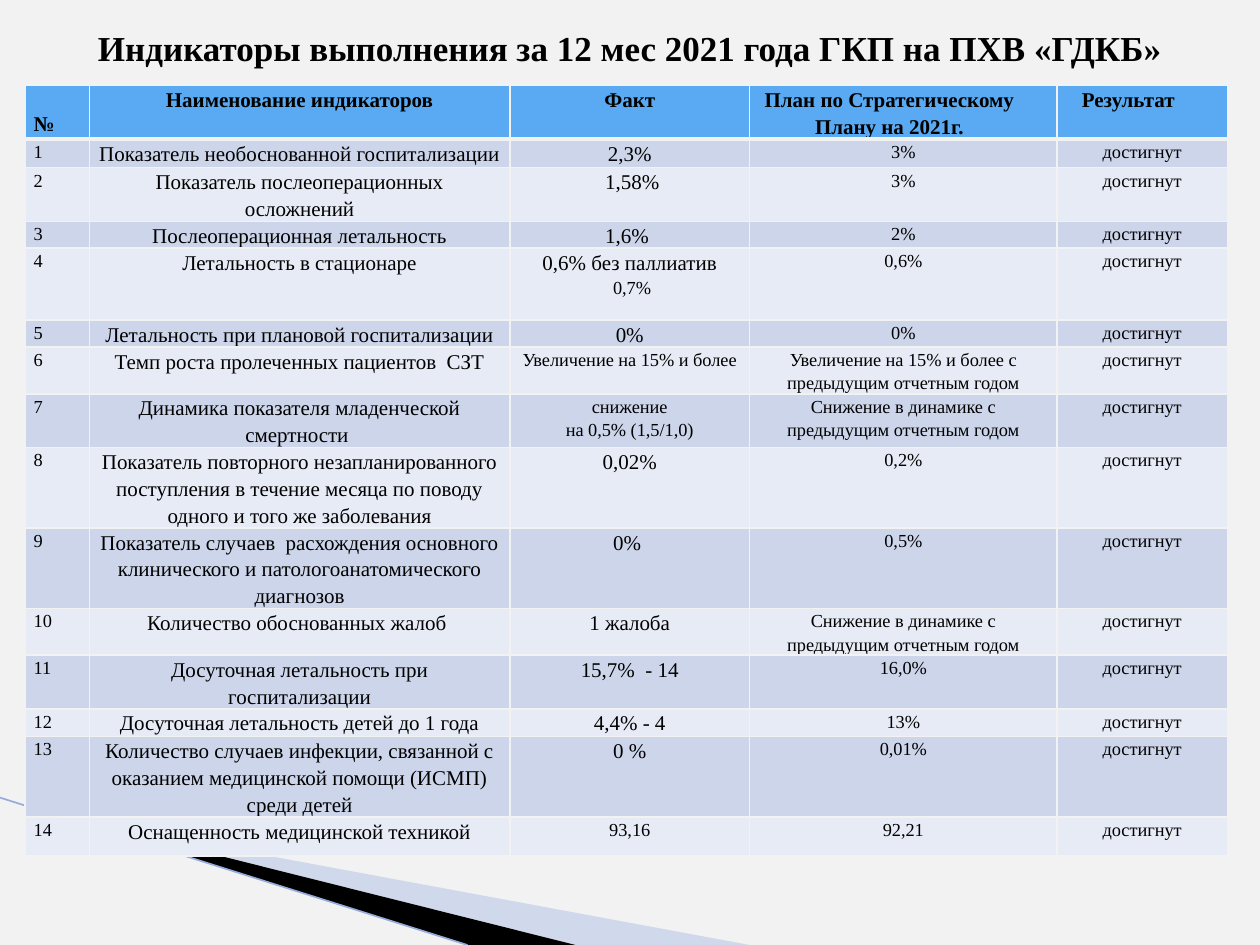
from pptx import Presentation
from pptx.dml.color import RGBColor
from pptx.enum.shapes import MSO_CONNECTOR as CONN
from pptx.enum.text import MSO_ANCHOR as ANCHOR, PP_ALIGN as ALIGN
from pptx.oxml.ns import qn
from pptx.util import Cm, Pt
from lxml.etree import SubElement

COLORS = {"back": "F2F2F2", "head": "59AAF2", "odd": "CCD5EA", "even": "E7EBF5",
          "text": "000000", "wedge": "000000", "glow": "9DB2E1", "edge": "94ABDC"}
COL_WIDTHS = [1.3, 8.48, 4.83, 6.2, 3.43]
ROW_HEIGHTS = [1.04, 0.58, 1.04, 0.51, 1.45, 0.51, 0.91, 1.04,
               1.57, 1.57, 0.91, 1.04, 0.56, 1.57, 0.79]
COL_SIZES = [10.5, 12, 12, 10.5, 10.5]
SMALL_FACTS = {" 0,7%", "Увеличение на 15% и более", " снижение ",
               "на 0,5% (1,5/1,0)", "93,16"}
HEADER = ["№", "Наименование индикаторов", "Факт",
          "План по Стратегическому Плану на 2021г.", "Результат"]
RESULT = "достигнут"
INDICATORS = [
    ("Показатель необоснованной госпитализации", "2,3%", "3%"),
    ("Показатель послеоперационных осложнений", " 1,58%", "3%"),
    ("Послеоперационная летальность", "1,6% ", "2%"),
    ("Летальность в стационаре", "0,6% без паллиатив\n 0,7%", "0,6%"),
    ("Летальность при плановой госпитализации", "0%", "0%"),
    ("Темп роста пролеченных пациентов  СЗТ", "Увеличение на 15% и более",
     "Увеличение на 15% и более с предыдущим отчетным годом"),
    ("Динамика показателя младенческой смертности ", " снижение \nна 0,5% (1,5/1,0)",
     "Снижение в динамике с предыдущим отчетным годом"),
    ("Показатель повторного незапланированного поступления в течение месяца "
     "по поводу одного и того же заболевания", "0,02%", "0,2%"),
    ("Показатель случаев  расхождения основного клинического "
     "и патологоанатомического диагнозов", "0% ", "0,5%"),
    ("Количество обоснованных жалоб ", "1 жалоба",
     "Снижение в динамике с предыдущим отчетным годом"),
    ("Досуточная летальность при госпитализации", "15,7%  - 14", "16,0%"),
    ("Досуточная летальность детей до 1 года", "4,4% - 4", "13%"),
    ("Количество случаев инфекции, связанной с оказанием медицинской помощи "
     "(ИСМП) среди детей", "0 %", "0,01%"),
    ("Оснащенность медицинской техникой", "93,16", "92,21"),
]


def rgb(name):
    """Return the named colour."""
    return RGBColor.from_string(COLORS[name])


def set_attrs(obj, values):
    """Set each attribute of the object from a dict."""
    for name, value in values.items():
        setattr(obj, name, value)


def write(tf, text, size, bold=False, align=ALIGN.CENTER, spacing=1.15):
    """Fill a text frame with one paragraph per line of text."""
    for i, line in enumerate(text.split("\n")):
        p = tf.add_paragraph() if i else tf.paragraphs[0]
        set_attrs(p, {"alignment": align, "line_spacing": spacing})
        r = p.add_run()
        r.text = line
        small = 10.5 if line in SMALL_FACTS else size
        set_attrs(r.font, {"name": "Times New Roman", "size": Pt(small), "bold": bold})
        r.font.color.rgb = rgb("text")


def add_polygon(s, x, y, points, color, alpha=None):
    """Draw a filled outline from points relative to x, y."""
    pts = [(Cm(x + dx), Cm(y + dy)) for dx, dy in points]
    builder = s.shapes.build_freeform(*pts[0])
    builder.add_line_segments(pts[1:], close=True)
    sp = builder.convert_to_shape()
    sp.shadow.inherit = False
    sp.fill.solid()
    sp.fill.fore_color.rgb = rgb(color)
    sp.line.fill.background()
    if alpha:
        clr = sp.fill._xPr.find(qn("a:solidFill"))[0]
        SubElement(clr, qn("a:alpha"), val=str(alpha * 1000))


def add_corner(s, x, y, w, h):
    """Draw the wedges and the edge line in the lower left corner."""
    add_polygon(s, x, y, [(1.4, 0.43), (w, h), (11.58, h), (1.4, 0.4)], "glow", 40)
    add_polygon(s, x, y, [(1.35, 0.4), (11.6, h), (9.45, h), (1.37, 0.43)], "wedge")
    line = s.shapes.add_connector(CONN.STRAIGHT, Cm(x), Cm(y), Cm(x + 9.42), Cm(y + h))
    line.line.width = Pt(0.95)
    line.line.color.rgb = rgb("edge")
    SubElement(line._element.spPr, qn("a:effectLst"))


def add_border(cell, side, width):
    """Add one border line to a cell, ahead of its fill."""
    ln = cell._tc.get_or_add_tcPr().makeelement(qn("a:" + side), {"w": str(Pt(width))})
    fill = SubElement(ln, qn("a:solidFill"))
    SubElement(fill, qn("a:srgbClr"), val=COLORS["back"])
    return ln


def format_cell(cell, color, header):
    """Set the margins, fill and borders of a cell."""
    set_attrs(cell, {"margin_left": Cm(0.18), "margin_right": Cm(0.18),
                     "margin_top": 0, "margin_bottom": 0})
    cell.fill.solid()
    cell.fill.fore_color.rgb = rgb(color)
    for i, side in enumerate(("lnL", "lnR", "lnT", "lnB")):
        width = 3 if header and side == "lnB" else 1
        cell._tc.tcPr.insert(i, add_border(cell, side, width))


def add_indicators(s, x, y):
    """Place the table of indicators with its corner at x, y."""
    rows = [HEADER] + [(str(i), *row, RESULT) for i, row in enumerate(INDICATORS, 1)]
    table = s.shapes.add_table(len(rows), len(HEADER), Cm(x), Cm(y),
                               Cm(sum(COL_WIDTHS)), Cm(sum(ROW_HEIGHTS))).table
    for col, width in zip(table.columns, COL_WIDTHS):
        col.width = Cm(width)
    for r, (row, height) in enumerate(zip(rows, ROW_HEIGHTS)):
        table.rows[r].height = Cm(height)
        color = "head" if r == 0 else "odd" if r % 2 else "even"
        for c, text in enumerate(row):
            cell = table.cell(r, c)
            format_cell(cell, color, r == 0)
            write(cell.text_frame, text, COL_SIZES[c] if r else 12, r == 0,
                  ALIGN.CENTER if c else ALIGN.LEFT)
    table.cell(0, 0).margin_top = Cm(0.48)
    for c in (3, 4):
        table.cell(0, c).margin_right = Cm(0.74)


def add_title(s, x, y, w, h):
    """Place the slide title in its box."""
    tf = s.shapes.add_textbox(Cm(x), Cm(y), Cm(w), Cm(h)).text_frame
    set_attrs(tf, {"word_wrap": True, "vertical_anchor": ANCHOR.MIDDLE})
    write(tf, "Индикаторы выполнения за 12 мес 2021 года ГКП на ПХВ «ГДКБ»",
          20, True, spacing=1.0)


def main():
    """Build and save the slide."""
    prs = Presentation()
    set_attrs(prs, {"slide_width": Cm(25.4), "slide_height": Cm(19.05)})
    s = prs.slides.add_slide(prs.slide_layouts[6])
    s.background.fill.solid()
    s.background.fill.fore_color.rgb = rgb("back")
    add_corner(s, 0, 16.08, 15.11, 2.97)
    add_indicators(s, 0.5, 1.72)
    add_title(s, 1.27, 0.33, 22.86, 1.27)
    prs.save("out.pptx")


if __name__ == "__main__":
    main()
